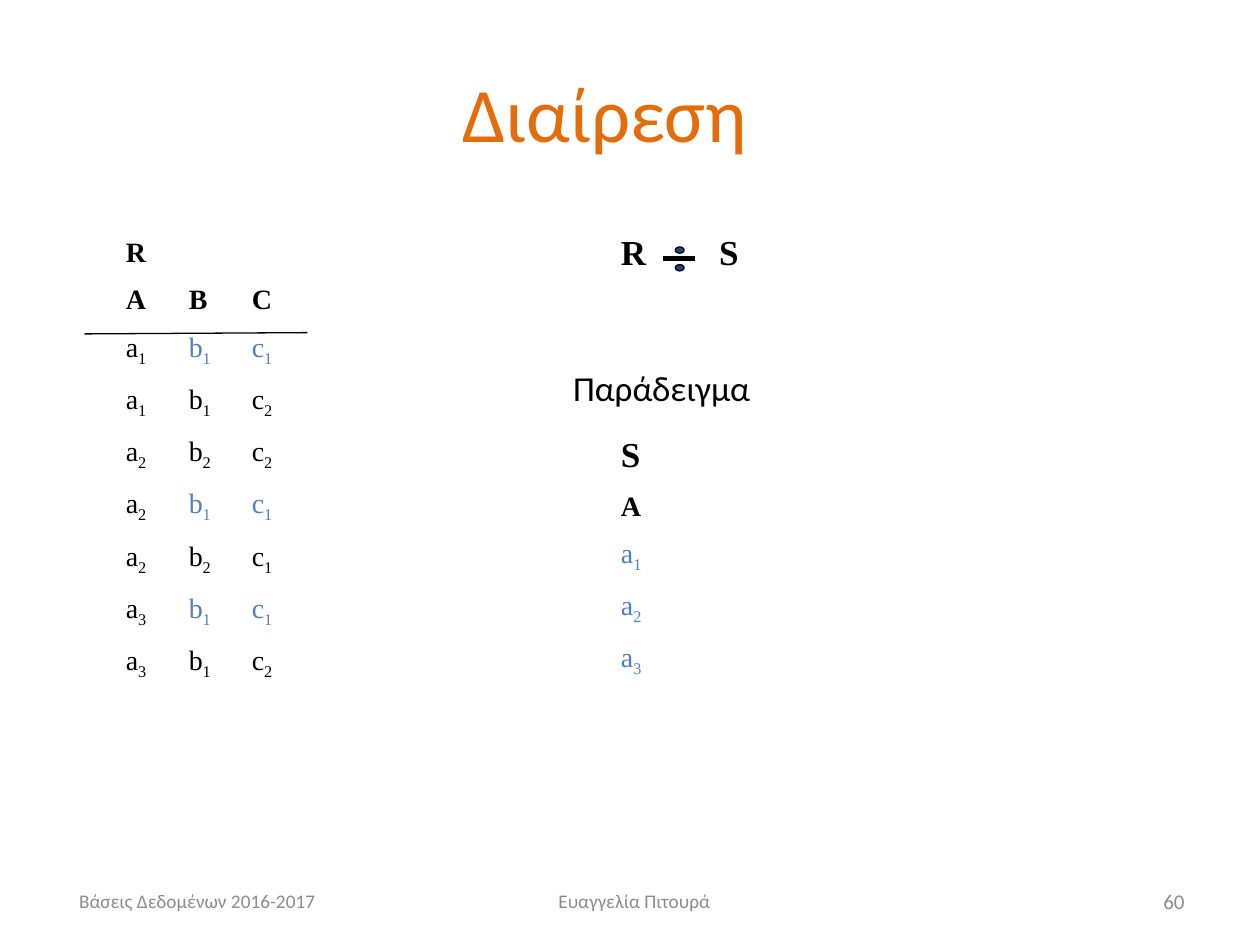
from lxml import etree
from pptx import Presentation
from pptx.dml.color import RGBColor
from pptx.enum.shapes import MSO_CONNECTOR, MSO_SHAPE
from pptx.enum.text import MSO_ANCHOR, PP_ALIGN
from pptx.oxml.ns import qn
from pptx.util import Inches, Pt

LEFT, CENTER, RIGHT = PP_ALIGN.LEFT, PP_ALIGN.CENTER, PP_ALIGN.RIGHT
TOP, MIDDLE = MSO_ANCHOR.TOP, MSO_ANCHOR.MIDDLE
LINE, OVAL = MSO_CONNECTOR.STRAIGHT, MSO_SHAPE.OVAL
BLACK, BLUE, NAVY, ORANGE, GREY = "000000", "4F81BD", "1F497D", "E46C0A", "8C8C8C"
SERIF, SANS = "Times New Roman", "Calibri"
HEAD = {"name": SERIF, "size": Pt(20), "bold": True}
COLUMNS = {"name": SERIF, "size": Pt(16), "bold": True}
CELL = {"name": SERIF, "size": Pt(16), "bold": False}
LABEL = {"name": SANS, "size": Pt(20)}
TITLE = {"name": SANS, "size": Pt(44)}
FOOTER = {"name": SANS, "size": Pt(11)}
NUMBER = {"name": SANS, "size": Pt(12)}
R_ROWS = ["a1 b1 c1", "a1 b1 c2", "a2 b2 c2", "a2 b1 c1",
          "a2 b2 c1", "a3 b1 c1", "a3 b1 c2"]
S_ROWS = ["a1", "a2", "a3"]


def rgb(value):
    """Return the colour for a hex string."""
    return RGBColor.from_string(value)


def add_run(p, text, fmt, color=BLACK, baseline=None):
    """Add a formatted run, lowered when a baseline is given."""
    r = p.add_run()
    r.text = text
    for key, value in fmt.items():
        setattr(r.font, key, value)
    r.font.color.rgb = rgb(color)
    if baseline:
        r._r.get_or_add_rPr().set("baseline", baseline)


def add_box(slide, box, anchor=TOP):
    """Add a wrapping text box and return its text frame."""
    tf = slide.shapes.add_textbox(*map(Inches, box)).text_frame
    tf.word_wrap = True
    tf.vertical_anchor = anchor
    return tf


def add_text(slide, box, text, fmt, color=BLACK, align=LEFT, anchor=MIDDLE):
    """Add a text box that holds one line."""
    p = add_box(slide, box, anchor).paragraphs[0]
    p.alignment = align
    add_run(p, text, fmt, color)


def space_paragraph(p, tab):
    """Set half a line of space before, and tab stops at equal steps."""
    pPr = p._p.get_or_add_pPr()
    before = etree.SubElement(pPr, qn("a:spcBef"))
    etree.SubElement(before, qn("a:spcPct")).set("val", "50000")
    tabs = etree.SubElement(pPr, qn("a:tabLst"))
    for n in (1, 2):
        stop = etree.SubElement(tabs, qn("a:tab"))
        stop.set("pos", str(Inches(tab * n)))
        stop.set("algn", "l")


def add_heading(tf, text, fmt, tab=0.5):
    """Fill the first paragraph, or a new one, with a heading."""
    p = tf.paragraphs[0] if not tf.text else tf.add_paragraph()
    space_paragraph(p, tab)
    add_run(p, text, fmt)


def add_rows(tf, rows, is_marked):
    """Add tuples with subscript indices, with marked cells in blue."""
    for row in rows:
        p = tf.add_paragraph()
        space_paragraph(p, 0.5)
        for i, (letter, index) in enumerate(row.split()):
            color = BLUE if is_marked(row, letter) else BLACK
            add_run(p, "\t" * (i > 0) + letter, CELL, color)
            add_run(p, index, CELL, color, "-25000")


def add_line(shapes, start, end, width):
    """Add a black line without a shadow."""
    s = shapes.add_connector(LINE, *map(Inches, start + end))
    s.line.color.rgb = rgb(BLACK)
    s.line.width = Pt(width)
    etree.SubElement(s._element.spPr, qn("a:effectLst"))


def add_division_sign(slide):
    """Add the grouped division sign."""
    shapes = slide.shapes.add_group_shape().shapes
    for y in (1.96, 2.1):
        sp = shapes.add_shape(OVAL, *map(Inches, (5.36, y, 0.07, 0.05)))
        sp.shadow.inherit = False
        sp.fill.solid()
        sp.fill.fore_color.rgb = rgb(NAVY)
        sp.line.color.rgb = rgb(BLACK)
        sp.line.width = Pt(0.75)
    add_line(shapes, (5.26, 2.05), (5.52, 2.05), 3)


def set_title(slide, box, text):
    """Place and format the title placeholder."""
    s = slide.shapes.title
    for key, value in zip(("left", "top", "width", "height"), box):
        setattr(s, key, Inches(value))
    s.text_frame.vertical_anchor = MIDDLE
    p = s.text_frame.paragraphs[0]
    p.alignment = CENTER
    add_run(p, text, TITLE, ORANGE)


def main():
    """Build the slide on relational division."""
    prs = Presentation()
    prs.slide_width, prs.slide_height = Inches(10), Inches(7.5)
    slide = prs.slides.add_slide(prs.slide_layouts[5])
    set_title(slide, (0.3, 0.26, 9, 1.25), "Διαίρεση")

    add_division_sign(slide)
    add_heading(add_box(slide, (4.83, 1.78, 2.6, 0.43)), "R\tS", HEAD, 0.78)

    tf = add_box(slide, (0.9, 1.81, 1.97, 3.58))
    add_heading(tf, "R", COLUMNS)
    add_heading(tf, "A\tB\tC", COLUMNS)
    add_rows(tf, R_ROWS, lambda row, letter: letter != "a" and row.endswith("b1 c1"))
    add_line(slide.shapes, (0.67, 2.65), (2.44, 2.64), 0.75)

    add_heading(add_box(slide, (4.45, 2.86, 1.97, 0.43)), "Παράδειγμα", LABEL)
    tf = add_box(slide, (4.83, 3.38, 1.36, 2.04))
    add_heading(tf, "S", HEAD)
    add_heading(tf, "A", COLUMNS)
    add_rows(tf, S_ROWS, lambda row, letter: True)

    add_text(slide, (0.53, 6.95, 2.33, 0.4), "Βάσεις Δεδομένων 2016-2017", FOOTER, GREY)
    add_text(slide, (3.45, 6.95, 3.17, 0.4), "Ευαγγελία Πιτουρά", FOOTER, GREY, CENTER)
    add_text(slide, (7.17, 6.95, 2.33, 0.4), "60", NUMBER, GREY, RIGHT)
    prs.save("out.pptx")


if __name__ == "__main__":
    main()
